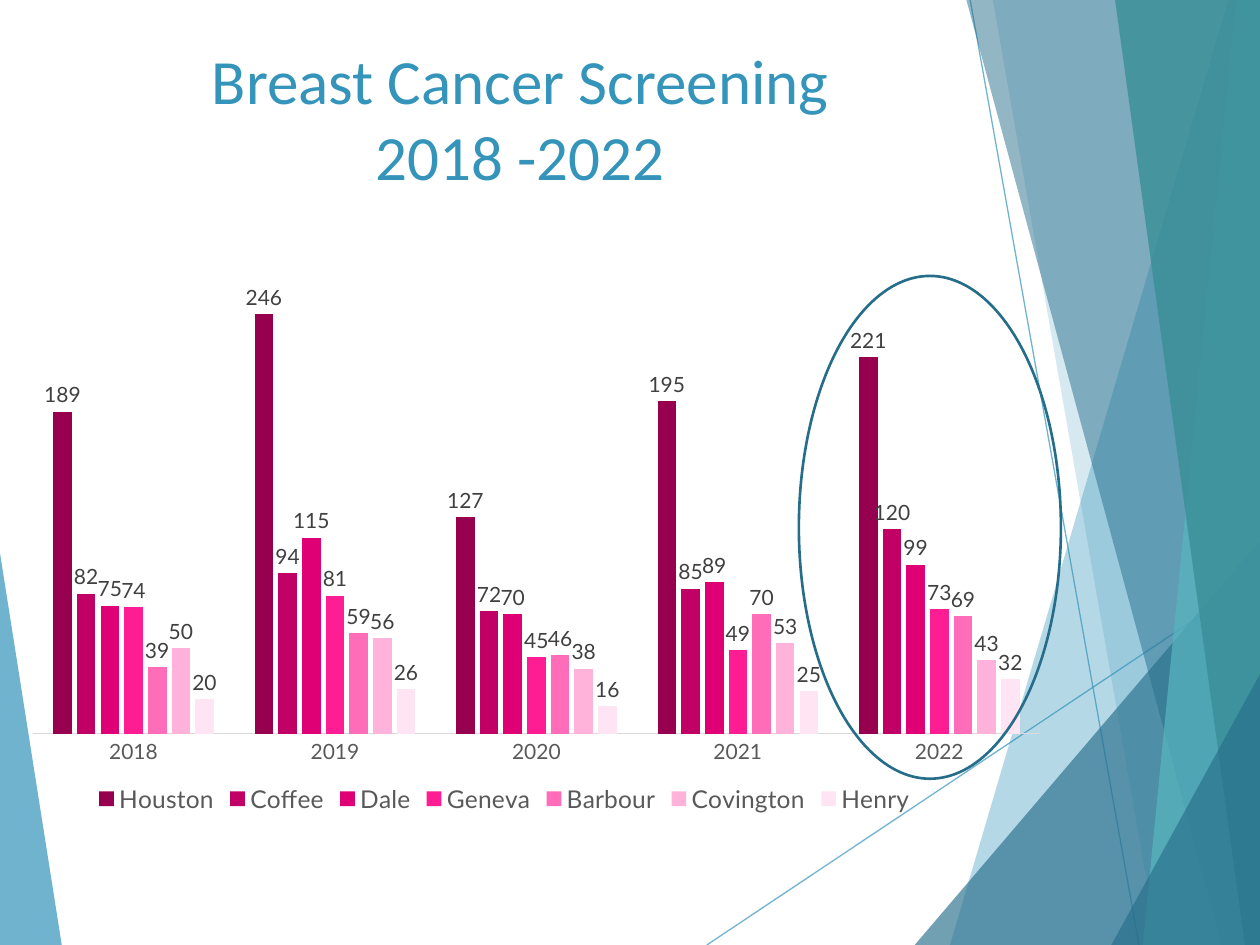
from lxml import etree
from pptx import Presentation
from pptx.chart.data import CategoryChartData
from pptx.dml.color import RGBColor
from pptx.enum.chart import XL_CHART_TYPE, XL_LABEL_POSITION, XL_LEGEND_POSITION, XL_TICK_MARK
from pptx.enum.shapes import MSO_CONNECTOR, MSO_SHAPE
from pptx.enum.text import MSO_ANCHOR, PP_ALIGN
from pptx.oxml.ns import qn
from pptx.util import Inches, Pt

COLUMNS = XL_CHART_TYPE.COLUMN_CLUSTERED
OUTSIDE = XL_LABEL_POSITION.OUTSIDE_END
BOTTOM = XL_LEGEND_POSITION.BOTTOM
NO_TICK = XL_TICK_MARK.NONE
STRAIGHT = MSO_CONNECTOR.STRAIGHT
ELLIPSE = MSO_SHAPE.OVAL
TOP = MSO_ANCHOR.TOP
CENTER = PP_ALIGN.CENTER
TITLE_ONLY = 5

WIDTH, HEIGHT = Inches(10), Inches(7.5)
COLS, ROWS = 100, 75

COLORS = {
    "blue": "3494BA", "deep": "276F8B", "aqua": "58B6C0", "teal": "3A8F98",
    "ring": "266D8A", "label": "404040", "text": "595959", "axis": "D9D9D9",
    "Houston": "96004F", "Coffee": "C00065", "Dale": "DE0074", "Geneva": "FF1D93",
    "Barbour": "FF6DB9", "Covington": "FFB3DB", "Henry": "FFE5F3",
}
YEARS = ["2018", "2019", "2020", "2021", "2022"]
SCREENINGS = {
    "Houston": (189, 246, 127, 195, 221),
    "Coffee": (82, 94, 72, 85, 120),
    "Dale": (75, 115, 70, 89, 99),
    "Geneva": (74, 81, 45, 49, 73),
    "Barbour": (39, 59, 46, 70, 69),
    "Covington": (50, 56, 38, 53, 43),
    "Henry": (20, 26, 16, 25, 32),
}
# Corners in grid units, fill colour, opacity in percent
LEFT_FACET = ([(0, 43.9), (4.9, 75), (0, 75)], "blue", 70)
RIGHT_FACETS = [
    ([(97.5, 0), (75.4, 75), (100, 75), (100, 0)], "blue", 36),
    ([(78.8, 0), (91.9, 75), (100, 75), (100, 0)], "blue", 20),
    ([(72.6, 75), (100, 42.9), (100, 75)], "deep", 66),
    ([(76.7, 0), (97, 75), (100, 75), (100, 0)], "deep", 50),
    ([(98.1, 0), (90.7, 75), (100, 75), (100, 0)], "aqua", 70),
    ([(88.5, 0), (98.8, 75), (100, 75), (100, 0)], "teal", 82),
    ([(88.2, 75), (100, 53.5), (100, 75)], "deep", 66),
]
FACET_LINES = [((56.1, 75), (100, 45.7)), ((77, 0), (90.4, 75))]


def rgb(name):
    return RGBColor.from_string(COLORS[name])


def set_font(font, size, color, face="Lato"):
    font.size, font.name, font.bold = Pt(size), face, False
    font.color.rgb = rgb(color)


def write(tf, text, align=CENTER, **style):
    p = tf.paragraphs[0]
    p.text, p.alignment = text, align
    for r in p.runs:
        set_font(r.font, **style)


def set_opacity(sp, percent):
    for clr in sp._element.spPr.iter(qn("a:srgbClr")):
        etree.SubElement(clr, qn("a:alpha")).set("val", str(percent * 1000))


class SlideBuilder:
    """Places styled elements on one slide by a 100 by 75 grid."""

    def __init__(self, slide):
        self.slide = slide
        self.shapes = slide.shapes

    def at(self, *lengths):
        """Turns alternating columns and rows into slide lengths."""
        units = (WIDTH / COLS, HEIGHT / ROWS)
        return [round(n * units[i % 2]) for i, n in enumerate(lengths)]

    def facet(self, corners, color, opacity):
        start, *rest = [self.at(*c) for c in corners]
        builder = self.shapes.build_freeform(*start)
        builder.add_line_segments(rest, close=True)
        sp = builder.convert_to_shape()
        sp.shadow.inherit = False
        sp.fill.solid()
        sp.fill.fore_color.rgb = rgb(color)
        sp.line.fill.background()
        set_opacity(sp, opacity)

    def line(self, start, end, color="blue", width=0.75, opacity=70):
        sp = self.shapes.add_connector(STRAIGHT, *self.at(*start, *end))
        sp.line.color.rgb = rgb(color)
        sp.line.width = Pt(width)
        set_opacity(sp, opacity)
        etree.SubElement(sp._element.spPr, qn("a:effectLst"))

    def title(self, text, *box):
        sp = self.shapes.title
        sp.left, sp.top, sp.width, sp.height = self.at(*box)
        tf = sp.text_frame
        tf.word_wrap, tf.vertical_anchor = True, TOP
        tf.margin_top = Inches(0.08)
        write(tf, text, size=36, color="blue", face="Calibri")

    def ring(self, *box):
        sp = self.shapes.add_shape(ELLIPSE, *self.at(*box))
        sp.shadow.inherit = False
        sp.fill.background()
        sp.line.color.rgb = rgb("ring")
        sp.line.width = Pt(1.5)

    def column_chart(self, categories, series, *box):
        data = CategoryChartData()
        data.categories = categories
        for name, values in series.items():
            data.add_series(name, values)
        chart = self.shapes.add_chart(COLUMNS, *self.at(*box), data).chart
        chart.has_title = False
        chart.font.name, chart.font.size = "Lato", Pt(10)
        chart.has_legend = True
        chart.legend.position = BOTTOM
        chart.legend.include_in_layout = False
        set_font(chart.legend.font, 14, "text")

        axis = chart.category_axis
        axis.major_tick_mark = axis.minor_tick_mark = NO_TICK
        axis.format.line.color.rgb = rgb("axis")
        axis.format.line.width = Pt(0.75)
        set_font(axis.tick_labels.font, 12, "text")
        scale = chart.value_axis
        scale.visible = scale.has_major_gridlines = False
        scale.minimum_scale, scale.maximum_scale = 0, 300

        plot = chart.plots[0]
        plot.gap_width, plot.overlap, plot.vary_by_categories = 219, -27, False
        for ser in plot.series:
            ser.format.fill.solid()
            ser.format.fill.fore_color.rgb = rgb(ser.name)
            labels = ser.data_labels
            labels.show_value, labels.position = True, OUTSIDE
            set_font(labels.font, 12, "label")
        self.place_plot(chart, x=0.06, y=0.02, w=0.94, h=0.84)

    def place_plot(self, chart, **shares):
        """Fixes the inner plot area as shares of the chart's size."""
        area = chart._chartSpace.chart.plotArea
        for old in area.findall(qn("c:layout")):
            area.remove(old)
        layout = etree.Element(qn("c:layout"))
        area.insert(0, layout)
        manual = etree.SubElement(layout, qn("c:manualLayout"))
        settings = {"layoutTarget": "inner", "xMode": "edge", "yMode": "edge", **shares}
        for tag, value in settings.items():
            etree.SubElement(manual, qn(f"c:{tag}")).set("val", str(value))


def main():
    prs = Presentation()
    prs.slide_width, prs.slide_height = WIDTH, HEIGHT
    page = SlideBuilder(prs.slides.add_slide(prs.slide_layouts[TITLE_ONLY]))
    page.facet(*LEFT_FACET)
    for start, end in FACET_LINES:
        page.line(start, end)
    for facet in RIGHT_FACETS:
        page.facet(*facet)
    page.title("Breast Cancer Screening\v2018 -2022", 1.7, 2.5, 79.2, 15)
    page.column_chart(YEARS, SCREENINGS, -2.5, 16.7, 85.1, 48.3)
    page.ring(63.4, 21.9, 20.8, 39.9)
    prs.save("out.pptx")


if __name__ == "__main__":
    main()
